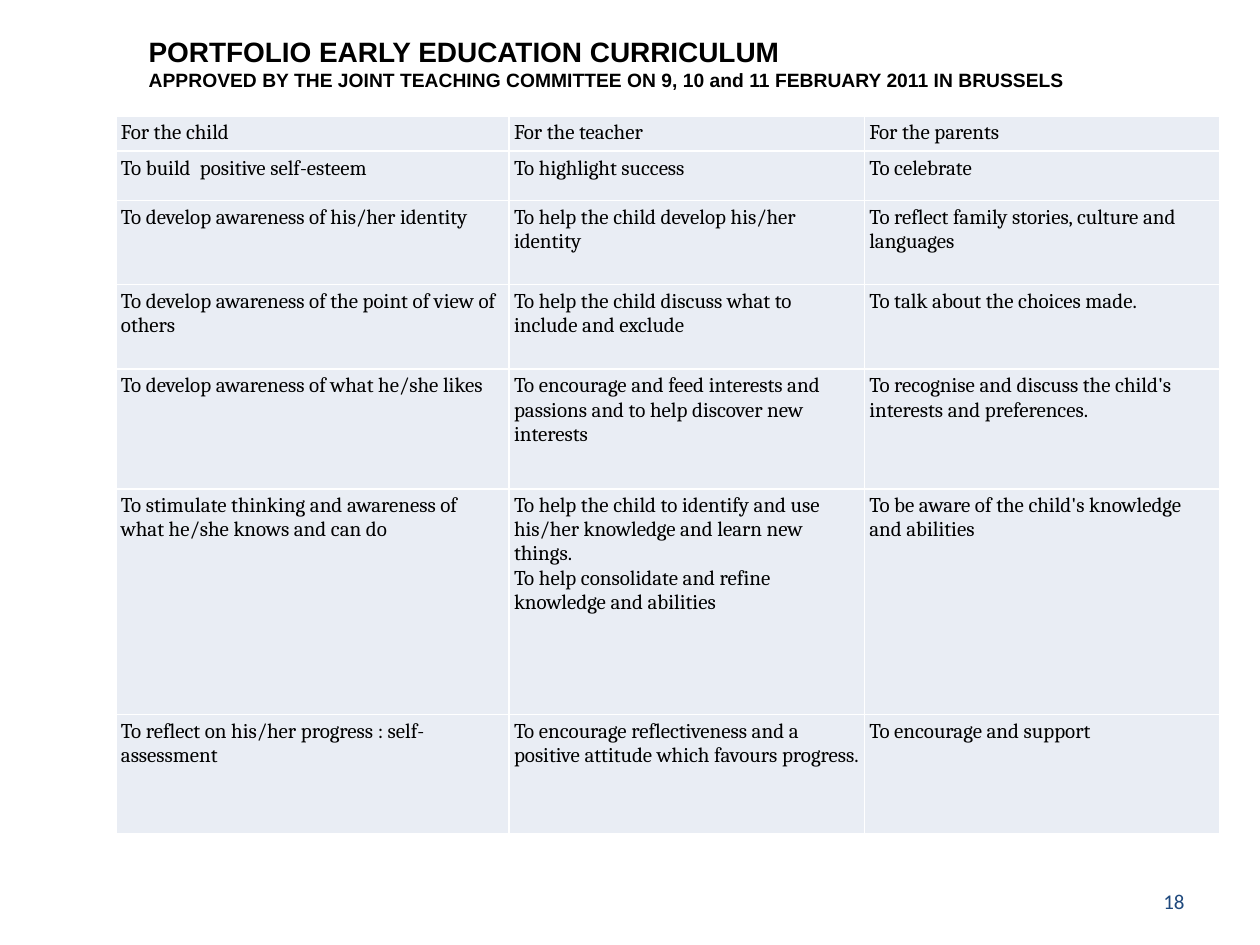
from dataclasses import dataclass

from lxml import etree
from pptx import Presentation
from pptx import util as u
from pptx.dml.color import RGBColor
from pptx.enum import text
from pptx.oxml import ns


@dataclass(frozen=True)
class Theme:
    ink: str = "000000"
    cell: str = "E9EDF4"
    border: str = "FFFFFF"
    number: str = "1F497D"
    heading_pt: int = 16
    approval_pt: int = 11
    body_pt: int = 12


theme = Theme()

HEADING = [
    ("PORTFOLIO EARLY EDUCATION CURRICULUM", theme.heading_pt),
    ("APPROVED BY THE JOINT TEACHING COMMITTEE ON 9, 10 and 11 FEBRUARY 2011 IN BRUSSELS",
     theme.approval_pt),
]
COLUMN_WIDTHS = [3.12, 2.82, 2.82]
# Row height, then the texts for the child, the teacher and the parents
AIMS = [
    (0.26, "For the child", "For the teacher", "For the parents"),
    (0.39, "To build  positive self-esteem", "To highlight success", "To celebrate"),
    (0.67, "To develop awareness of his/her identity",
     "To help the child develop his/her identity",
     "To reflect family stories, culture and languages"),
    (0.67, "To develop awareness of the point of view of others",
     "To help the child discuss what to include and exclude",
     "To talk about the choices made."),
    (0.95, "To develop awareness of what he/she likes",
     "To encourage and feed interests and passions and to help discover new interests",
     "To recognise and discuss the child's interests and preferences."),
    (1.79, "To stimulate thinking and awareness of what he/she knows and can do",
     "To help the child to identify and use his/her knowledge and learn new things.\n"
     "To help consolidate and refine knowledge and abilities",
     "To be aware of the child's knowledge and abilities"),
    (0.95, "To reflect on his/her progress : self-assessment",
     "To encourage reflectiveness and a positive attitude which favours progress.",
     "To encourage and support"),
]


def add_lines(frame, lines, font, color, bold=False, align=None):
    """Write (wording, size) pairs as one paragraph each."""
    for index, (wording, size) in enumerate(lines):
        paragraph = frame.add_paragraph() if index else frame.paragraphs[0]
        paragraph.alignment = align
        run = paragraph.add_run()
        run.text = wording
        run.font.name = font
        run.font.size = u.Pt(size)
        run.font.bold = bold
        run.font.color.rgb = RGBColor.from_string(color)


def add_borders(cell):
    properties = cell._tc.get_or_add_tcPr()
    for index, side in enumerate(("lnL", "lnR", "lnT", "lnB")):
        line = etree.Element(ns.qn(f"a:{side}"), w=str(u.Pt(1)))
        fill = etree.SubElement(line, ns.qn("a:solidFill"))
        etree.SubElement(fill, ns.qn("a:srgbClr"), val=theme.border)
        properties.insert(index, line)


deck = Presentation()
deck.slide_width, deck.slide_height = u.Inches(10), u.Inches(7.5)
slide = deck.slides.add_slide(deck.slide_layouts.get_by_name("Title Only"))

# Heading
heading = slide.shapes.title
heading.left, heading.top = u.Inches(1.08), u.Inches(0.22)
heading.width, heading.height = u.Inches(7.84), u.Inches(0.56)
heading.text_frame.word_wrap = True
heading.text_frame.auto_size = text.MSO_AUTO_SIZE.SHAPE_TO_FIT_TEXT
heading.text_frame.vertical_anchor = text.MSO_ANCHOR.MIDDLE
add_lines(heading.text_frame, HEADING, "Arial", theme.ink, True, text.PP_ALIGN.JUSTIFY)

# Aims of the portfolio
aims = slide.shapes.add_table(
    len(AIMS), len(COLUMN_WIDTHS), u.Inches(0.92), u.Inches(0.92),
    u.Inches(sum(COLUMN_WIDTHS)), u.Inches(sum(row[0] for row in AIMS))).table
aims.first_row = aims.horz_banding = False
for column, width in zip(aims.columns, COLUMN_WIDTHS):
    column.width = u.Inches(width)
for row, (height, *wordings) in zip(aims.rows, AIMS):
    row.height = u.Inches(height)
    for cell, wording in zip(row.cells, wordings):
        cell.margin_left = cell.margin_right = u.Inches(0.04)
        cell.margin_top = cell.margin_bottom = u.Inches(0.04)
        cell.fill.solid()
        cell.fill.fore_color.rgb = RGBColor.from_string(theme.cell)
        add_borders(cell)
        lines = [(line, theme.body_pt) for line in wording.split("\n")]
        add_lines(cell.text_frame, lines, "Cambria", theme.ink)

# Page number
number = slide.shapes.add_textbox(
    u.Inches(7.17), u.Inches(6.95), u.Inches(2.33), u.Inches(0.4)).text_frame
number.word_wrap = True
number.vertical_anchor = text.MSO_ANCHOR.MIDDLE
add_lines(number, [("18", theme.body_pt)], "Calibri", theme.number,
          align=text.PP_ALIGN.RIGHT)

deck.save("out.pptx")
